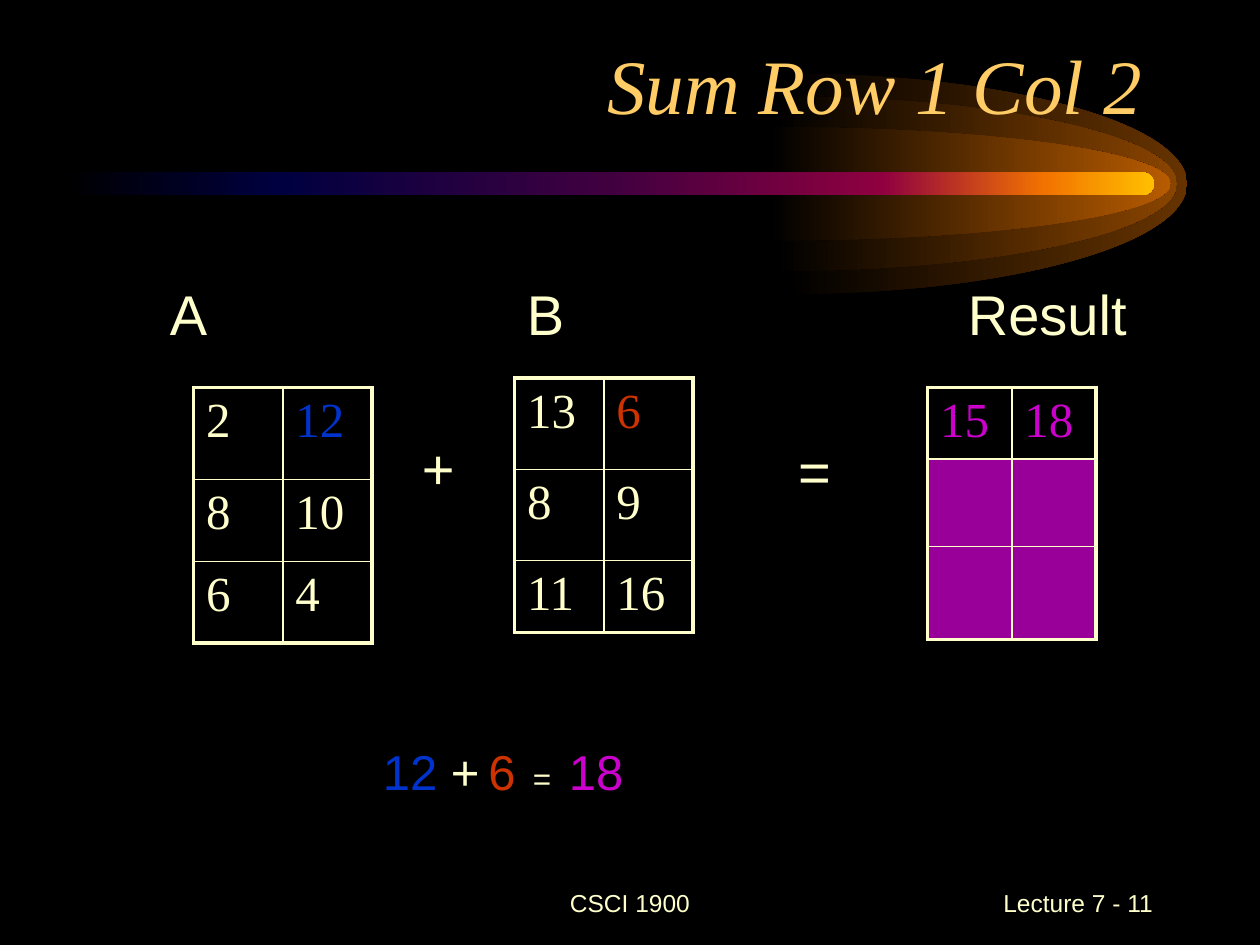
from lxml.etree import SubElement
from pptx import Presentation
from pptx.dml.color import RGBColor
from pptx.enum.shapes import MSO_SHAPE
from pptx.enum.text import MSO_ANCHOR, MSO_AUTO_SIZE, PP_ALIGN
from pptx.oxml.ns import qn
from pptx.util import Pt

COLORS = {
    "black": "000000",
    "cream": "FFFFCC",
    "gold": "FFCC66",
    "blue": "0033CC",
    "red": "CC3300",
    "magenta": "CC00CC",
    "purple": "990099",
    "outer glow": "663300",
    "middle glow": "894400",
    "inner glow": "B75B00",
    "navy": "000040",
    "plum": "400040",
    "crimson": "8F0040",
    "orange": "F27300",
    "amber": "FFBF00",
}
SANS, SERIF = "Arial", "Times New Roman"
OUTER_BORDER, INNER_BORDER = 2.25, 1
CIRCLE_HANDLE = 0.55


class MatrixSlide:
    def __init__(self, presentation):
        self.slide = presentation.slides.add_slide(presentation.slide_layouts[5])
        background = self.slide.background.fill
        background.solid()
        background.fore_color.rgb = RGBColor.from_string(COLORS["black"])

    def add_run(self, paragraph, text, size, color="cream", font=SANS, spacing=0):
        run = paragraph.add_run()
        run.text = text
        run.font.size = Pt(size)
        run.font.name = font
        run.font.color.rgb = RGBColor.from_string(COLORS[color])
        if spacing:
            run.font._element.set("spc", str(round(spacing * 100)))
        return run

    def title(self, text, left, top, width, height):
        """Fill the title placeholder and bring it in front of the shapes so far."""
        title = self.slide.shapes.title
        title.left, title.top, title.width, title.height = map(Pt, (left, top, width, height))
        frame = title.text_frame
        frame.auto_size = MSO_AUTO_SIZE.NONE
        frame.vertical_anchor = MSO_ANCHOR.BOTTOM
        frame.paragraphs[0].alignment = PP_ALIGN.RIGHT
        self.add_run(frame.paragraphs[0], text, 44, "gold", SERIF).font.italic = True
        self.slide.shapes._spTree.append(title._element)

    def text(self, runs, left, top, width, height, wrap=True,
             align=PP_ALIGN.LEFT, anchor=MSO_ANCHOR.TOP):
        """Add a one-paragraph text box; each run is a tuple of add_run arguments."""
        frame = self.slide.shapes.add_textbox(*map(Pt, (left, top, width, height))).text_frame
        frame.word_wrap = wrap
        frame.vertical_anchor = anchor
        paragraph = frame.paragraphs[0]
        paragraph.alignment = align
        for run in runs:
            self.add_run(paragraph, *run)

    def gradient(self, shape, stops):
        """Fill a shape from left to right with (percent, colour) stops."""
        shape.shadow.inherit = False
        shape.line.fill.background()
        shape.fill.gradient()
        shape.fill.gradient_angle = 0
        stop_list = shape._element.spPr.find(qn("a:gradFill")).find(qn("a:gsLst"))
        for stop in list(stop_list):
            stop_list.remove(stop)
        for percent, color in stops:
            stop = SubElement(stop_list, qn("a:gs"), pos=str(percent * 1000))
            SubElement(stop, qn("a:srgbClr"), val=COLORS[color])

    def glow(self, left, center_y, width, radius, color):
        """Add the right half of an ellipse that fades in from black."""
        builder = self.slide.shapes.build_freeform(Pt(left), Pt(center_y - radius))
        builder.add_line_segments([(Pt(left + width), Pt(center_y)),
                                   (Pt(left), Pt(center_y + radius))])
        shape = builder.convert_to_shape()
        self.round_off(shape, width, radius)
        self.gradient(shape, [(0, "black"), (100, color)])

    def round_off(self, shape, width, radius):
        """Turn both straight segments of a freeform into quarter ellipses."""
        reach_x, reach_y = width * CIRCLE_HANDLE, radius * CIRCLE_HANDLE
        curves = [
            [(reach_x, 0), (width, radius - reach_y), (width, radius)],
            [(width, radius + reach_y), (reach_x, 2 * radius), (0, 2 * radius)],
        ]
        outline = next(shape._element.iter(qn("a:path")))
        for segment in outline.findall(qn("a:lnTo")):
            outline.remove(segment)
        for points in curves:
            curve = SubElement(outline, qn("a:cubicBezTo"))
            for x, y in points:
                SubElement(curve, qn("a:pt"), x=str(Pt(x)), y=str(Pt(y)))
        for close in outline.findall(qn("a:close")):
            outline.remove(close)
        SubElement(outline, qn("a:close"))

    def bar(self, left, top, width, height, stops):
        shape = self.slide.shapes.add_shape(
            MSO_SHAPE.ROUNDED_RECTANGLE, *map(Pt, (left, top, width, height)))
        shape.adjustments[0] = 0.5
        self.gradient(shape, stops)

    def matrix(self, values, left, top, column_width, row_heights, marks):
        """Add a bordered table; marks gives colours by cell, and None is a blank cell."""
        row_count, column_count = len(values), len(values[0])
        table = self.slide.shapes.add_table(
            row_count, column_count, Pt(left), Pt(top),
            Pt(column_width * column_count), Pt(sum(row_heights))).table
        table.first_row = table.horz_banding = False
        for column in table.columns:
            column.width = Pt(column_width)
        for r, row in enumerate(values):
            table.rows[r].height = Pt(row_heights[r])
            for c, value in enumerate(row):
                cell = table.cell(r, c)
                self.borders(cell, {"L": c == 0, "R": c == column_count - 1,
                                    "T": r == 0, "B": r == row_count - 1})
                cell.fill.solid()
                fill = "purple" if value is None else "black"
                cell.fill.fore_color.rgb = RGBColor.from_string(COLORS[fill])
                if value is not None:
                    color = marks.get((r, c), "cream")
                    self.add_run(cell.text_frame.paragraphs[0], str(value), 28, color, SERIF)

    def borders(self, cell, outer_sides):
        properties = cell._tc.get_or_add_tcPr()
        for side, outer in outer_sides.items():
            width = Pt(OUTER_BORDER if outer else INNER_BORDER)
            line = SubElement(properties, qn(f"a:ln{side}"), w=str(width))
            fill = SubElement(line, qn("a:solidFill"))
            SubElement(fill, qn("a:srgbClr"), val=COLORS["cream"])


def main():
    presentation = Presentation()
    presentation.slide_width, presentation.slide_height = Pt(720), Pt(540)
    page = MatrixSlide(presentation)

    for left, radius, color in [(449.3, 63, "outer glow"), (443.5, 50, "middle glow"),
                                (440, 32.5, "inner glow")]:
        page.glow(left, 105, 229, radius, color)
    page.bar(36, 98.5, 623.5, 13, [(0, "black"), (20, "navy"), (50, "plum"),
                                   (75, "crimson"), (90, "orange"), (100, "amber")])

    page.text([("CSCI 1900", 14)], 246, 498, 228, 36,
              align=PP_ALIGN.CENTER, anchor=MSO_ANCHOR.MIDDLE)
    page.text([("Lecture 7 - 11", 14)], 516, 498, 150, 36,
              align=PP_ALIGN.RIGHT, anchor=MSO_ANCHOR.MIDDLE)
    page.title("Sum Row 1 Col 2", 48, 18, 612, 60)

    page.matrix([(2, 12), (8, 10), (6, 4)], 110.6, 221.4, 51, (52.5, 47, 46.5),
                {(0, 1): "blue"})
    page.matrix([(13, 6), (8, 9), (11, 16)], 294, 216, 51, (52.3, 52, 41), {(0, 1): "red"})
    page.matrix([(15, 18), (None, None), (None, None)], 530, 221.4, 48.2, (41, 50, 53),
                {(0, 0): "magenta", (0, 1): "magenta"})

    for label, left, top, width in [("+", 234, 244, 33), ("=", 449, 246, 55),
                                    ("A", 90, 156, 36), ("B", 294, 156, 36),
                                    ("Result", 546, 156, 105)]:
        page.text([(label, 32)], left, top, width, 45, wrap=False)

    wide_space = (" ", 18, "cream", SANS, 5)
    page.text([(" 12 ", 28, "blue"), ("+", 28), (" ", 18), ("6", 28, "red"),
               wide_space, ("=", 18), wide_space, ("18", 28, "magenta")], 204, 420, 282, 41)

    presentation.save("out.pptx")


if __name__ == "__main__":
    main()
